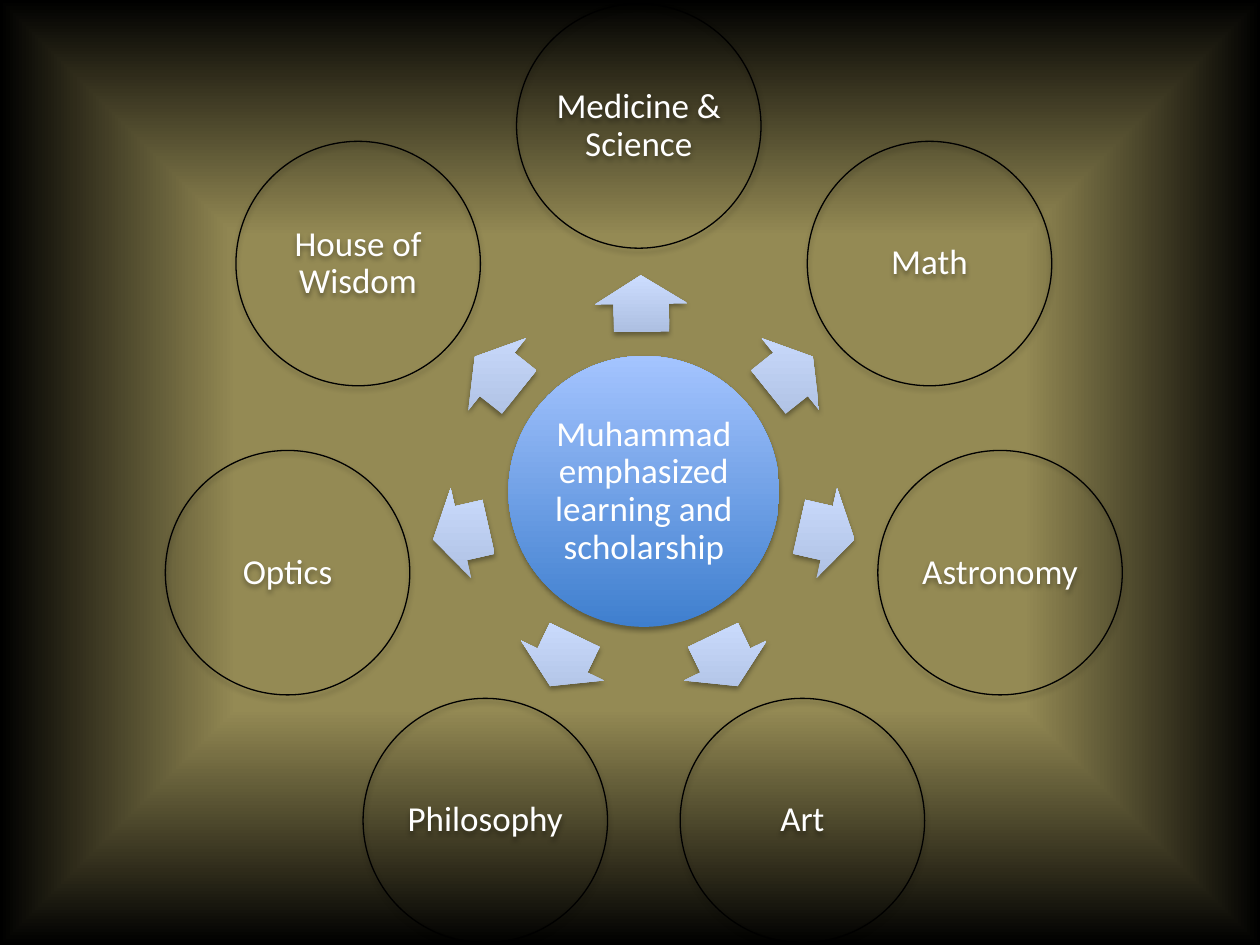
from math import atan2, cos, degrees, pi, sin

from lxml.etree import fromstring
from pptx import Presentation
from pptx.dml.color import RGBColor
from pptx.enum.shapes import MSO_SHAPE
from pptx.enum.text import MSO_ANCHOR, PP_ALIGN
from pptx.oxml.ns import nsdecls, qn
from pptx.util import Inches, Pt

CENTER_X, CENTER_Y = 5.11, 3.9
TOPIC_RADIUS, ARROW_RADIUS = 2.9, 1.49
TOP_SHIFT = -0.04  # the first topic sits slightly left of the axis
HUB_TEXT = "Muhammad emphasized learning and scholarship"
TOPICS = ["Medicine & Science", "Math", "Astronomy", "Art",
          "Philosophy", "Optics", "House of Wisdom"]
UPWARD = '<a:lin ang="16200000" scaled="0"/>'
FROM_CENTER = ('<a:path path="rect"><a:fillToRect l="50000" t="50000" '
               'r="50000" b="50000"/></a:path>')


def color(value):
    return RGBColor.from_string(value)


def gradient(stops, direction):
    """Return a gradFill element for (percent, colour) stops."""
    gs = "".join(f'<a:gs pos="{pos * 1000}"><a:srgbClr val="{value}"/></a:gs>'
                 for pos, value in stops)
    return fromstring(f'<a:gradFill {nsdecls("a")} rotWithShape="0">'
                      f'<a:gsLst>{gs}</a:gsLst>{direction}</a:gradFill>')


def soft_shadow():
    return fromstring(
        f'<a:effectLst {nsdecls("a")}><a:outerShdw blurRad="{Pt(3.1)}" '
        f'dist="{Pt(1.8)}" dir="5400000" rotWithShape="0">'
        '<a:srgbClr val="000000"><a:alpha val="35000"/></a:srgbClr>'
        '</a:outerShdw></a:effectLst>')


class RadialDiagram:
    """Holds the style and the slide on which the diagram is drawn."""

    font, size, text_color, outline = "Calibri", 20, "FFFFFF", "000000"
    hub_stops = [(0, "3F7FCE"), (100, "A4C4FF")]
    arrow_stops = [(0, "ADBFE1"), (100, "CCDDFF")]
    background_stops = [(50, "948A54"), (100, "000000")]

    def __init__(self, prs):
        self.s = prs.slides.add_slide(prs.slide_layouts[6])

    def background(self):
        self.s.background.fill.solid()
        bg = self.s._element.find(".//" + qn("p:bgPr"))
        bg.replace(bg.find(qn("a:solidFill")),
                   gradient(self.background_stops, FROM_CENTER))

    def shape(self, kind, x, y, width, height, stops=None):
        """Add a shadowed shape centred on x, y: gradient or outline only."""
        sp = self.s.shapes.add_shape(
            kind, Inches(x - width / 2), Inches(y - height / 2),
            Inches(width), Inches(height))
        sp.shadow.inherit = False
        sp_pr = sp._element.spPr
        sp_pr.replace(sp_pr.find(qn("a:effectLst")), soft_shadow())
        sp.fill.background()
        if stops:
            sp.line.fill.background()
            sp_pr.replace(sp_pr.find(qn("a:noFill")), gradient(stops, UPWARD))
        else:
            sp.line.color.rgb = color(self.outline)
            sp.line.width = Pt(0.75)
        return sp

    def circle(self, text, x, y, diameter, stops=None):
        sp = self.shape(MSO_SHAPE.OVAL, x, y, diameter, diameter, stops)
        tf = sp.text_frame
        tf.text = text
        tf.word_wrap = True
        tf.vertical_anchor = MSO_ANCHOR.MIDDLE
        tf.margin_left = tf.margin_right = Inches(0.03)
        tf.margin_top = tf.margin_bottom = Inches(0.03)
        p = tf.paragraphs[0]
        p.alignment = PP_ALIGN.CENTER
        p.line_spacing = 0.9
        font = p.runs[0].font
        font.name, font.size = self.font, Pt(self.size)
        font.color.rgb = color(self.text_color)

    def arrow(self, angle):
        """Add an arrow pointing away from the hub; angle in radians."""
        sp = self.shape(MSO_SHAPE.RIGHT_ARROW,
                        CENTER_X + ARROW_RADIUS * cos(angle),
                        CENTER_Y + ARROW_RADIUS * sin(angle),
                        0.45, 0.73, self.arrow_stops)
        sp.adjustments[0], sp.adjustments[1] = 0.6, 0.5
        sp.rotation = degrees(angle) % 360


def main():
    prs = Presentation()
    prs.slide_width, prs.slide_height = Inches(10), Inches(7.5)
    diagram = RadialDiagram(prs)
    diagram.background()
    diagram.circle(HUB_TEXT, CENTER_X, CENTER_Y, 2.15, diagram.hub_stops)
    for i, topic in enumerate(TOPICS):
        turn = 2 * pi * i / len(TOPICS) - pi / 2
        dx = TOPIC_RADIUS * cos(turn) + (TOP_SHIFT if i == 0 else 0)
        dy = TOPIC_RADIUS * sin(turn)
        diagram.arrow(atan2(dy, dx))
        diagram.circle(topic, CENTER_X + dx, CENTER_Y + dy, 1.94)
    prs.save("out.pptx")


if __name__ == "__main__":
    main()
